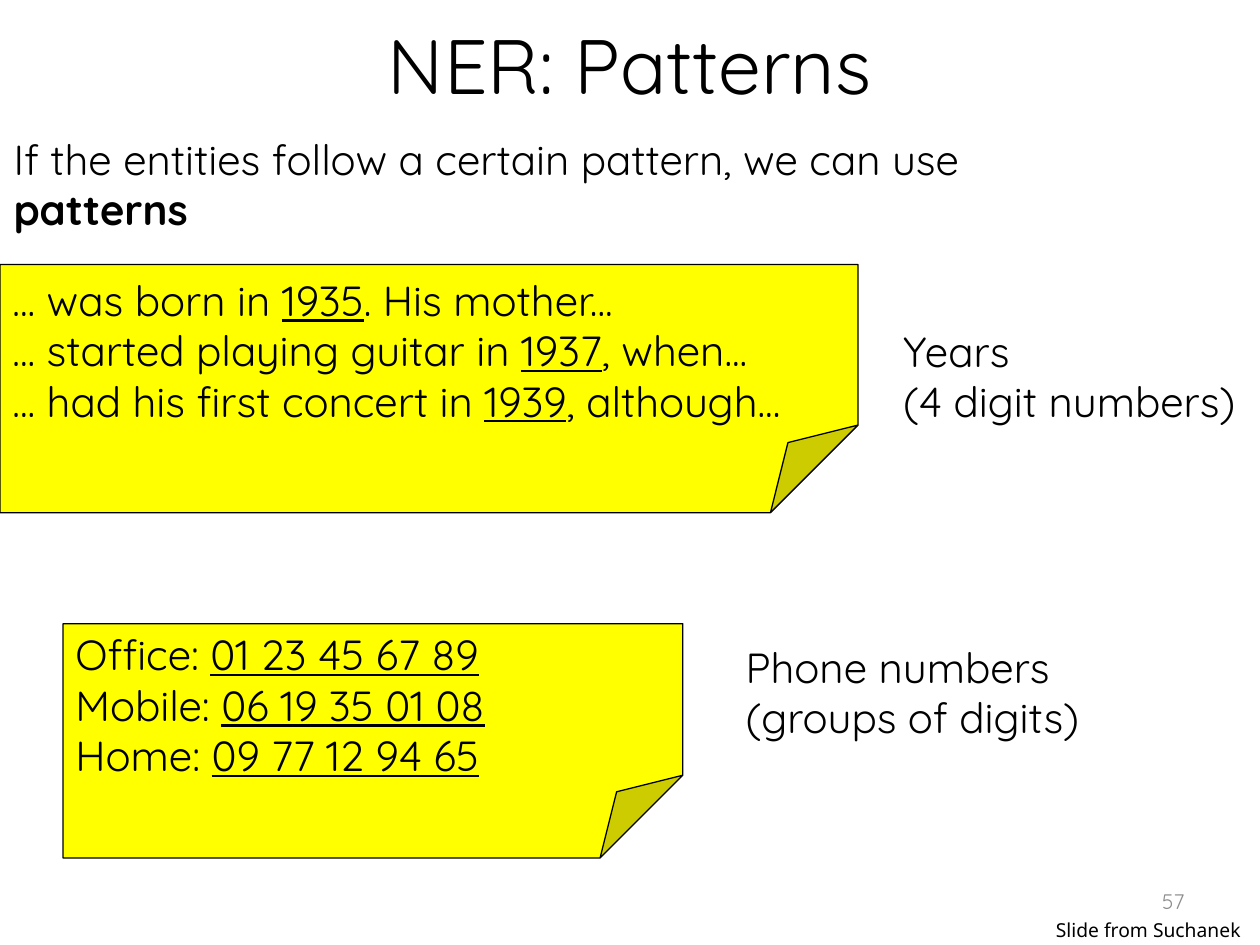
import lxml.etree
import pptx
import pptx.util
import pptx.dml.color
import pptx.enum.shapes
import pptx.enum.text
import pptx.oxml.ns

Pt = pptx.util.Pt
RGBColor = pptx.dml.color.RGBColor
ALIGN = pptx.enum.text.PP_ALIGN
ANCHOR = pptx.enum.text.MSO_ANCHOR
qn = pptx.oxml.ns.qn

BLACK = RGBColor(0x00, 0x00, 0x00)
GRAY = RGBColor(0x8C, 0x8C, 0x8C)
YELLOW = RGBColor(0xFF, 0xFF, 0x00)
FONT = "Quicksand"
CREDIT_FONT = "Noto Sans"
BODY_SIZE = 24
FOLD = 35300

# Each line alternates plain and emphasised runs.
TITLE = [["NER: Patterns"]]
INTRO = [["If the entities follow a certain pattern, we can use ", "patterns"]]
EXAMPLES = [
    {
        "note_box": (0, 151.2, 490.3, 141.8),
        "note": [
            ["... was born in ", "1935", ". His mother..."],
            ["... started playing guitar in ", "1937", ", when..."],
            ["... had his first concert in ", "1939", ", although..."],
        ],
        "label_box": (509, 182.2, 211, 65.5),
        "label": [["Years"], ["(4 digit numbers)"]],
    },
    {
        "note_box": (36, 356.4, 354.2, 133.9),
        "note": [
            ["Office: ", "01 23 45 67 89"],
            ["Mobile: ", "06 19 35 01 08"],
            ["Home: ", "09 77 12 94 65"],
        ],
        "label_box": (419, 362.9, 209.5, 65.5),
        "label": [["Phone numbers"], ["(groups of digits)"]],
    },
]
PAGE_NUMBER = [["57"]]
CREDIT = [["Slide from Suchanek"]]


def place(shape, box):
    shape.left, shape.top, shape.width, shape.height = map(Pt, box)


def write(shape, lines, size=BODY_SIZE, font=FONT, color=BLACK,
          align=ALIGN.LEFT, anchor=ANCHOR.TOP, emphasis="bold", wrap=True):
    frame = shape.text_frame
    frame.word_wrap = wrap
    frame.vertical_anchor = anchor
    for number, line in enumerate(lines):
        paragraph = frame.add_paragraph() if number else frame.paragraphs[0]
        paragraph.alignment = align
        for position, text in enumerate(line):
            run = paragraph.add_run()
            run.text = text
            run.font.name = font
            run.font.size = Pt(size)
            run.font.color.rgb = color
            if position % 2:
                setattr(run.font, emphasis, True)


def add_text(slide, box, lines, **style):
    write(slide.shapes.add_textbox(*map(Pt, box)), lines, **style)


def add_note(slide, box, lines):
    shape = slide.shapes.add_shape(
        pptx.enum.shapes.MSO_SHAPE.FOLDED_CORNER, *map(Pt, box))
    guides = next(shape.element.iter(qn("a:avLst")))
    for guide in list(guides):
        guides.remove(guide)
    lxml.etree.SubElement(guides, qn("a:gd"), name="adj", fmla=f"val {FOLD}")
    shape.shadow.inherit = False
    shape.fill.solid()
    shape.fill.fore_color.rgb = YELLOW
    shape.line.color.rgb = BLACK
    shape.line.width = Pt(0.75)
    shape.text_frame.margin_top = Pt(5.76)
    shape.text_frame.margin_bottom = Pt(0)
    write(shape, lines, anchor=ANCHOR.MIDDLE, emphasis="underline")


def main():
    presentation = pptx.Presentation()
    presentation.slide_width = Pt(720)
    presentation.slide_height = Pt(540)
    slide = presentation.slides.add_slide(presentation.slide_layouts[5])

    title = slide.shapes.title
    place(title, (36, 0, 648, 72.7))
    write(title, TITLE, size=44, align=ALIGN.CENTER, anchor=ANCHOR.MIDDLE)
    add_text(slide, (0.7, 72.7, 628.6, 65.5), INTRO)

    for example in EXAMPLES:
        add_note(slide, example["note_box"], example["note"])
        add_text(slide, example["label_box"], example["label"], wrap=False)

    add_text(slide, (516.2, 500.4, 167.8, 28.8), PAGE_NUMBER, size=12,
             color=GRAY, align=ALIGN.RIGHT, anchor=ANCHOR.MIDDLE)
    add_text(slide, (596.2, 521.3, 123.8, 20.9), CREDIT, size=11,
             font=CREDIT_FONT, wrap=False)
    presentation.save("out.pptx")


if __name__ == "__main__":
    main()
